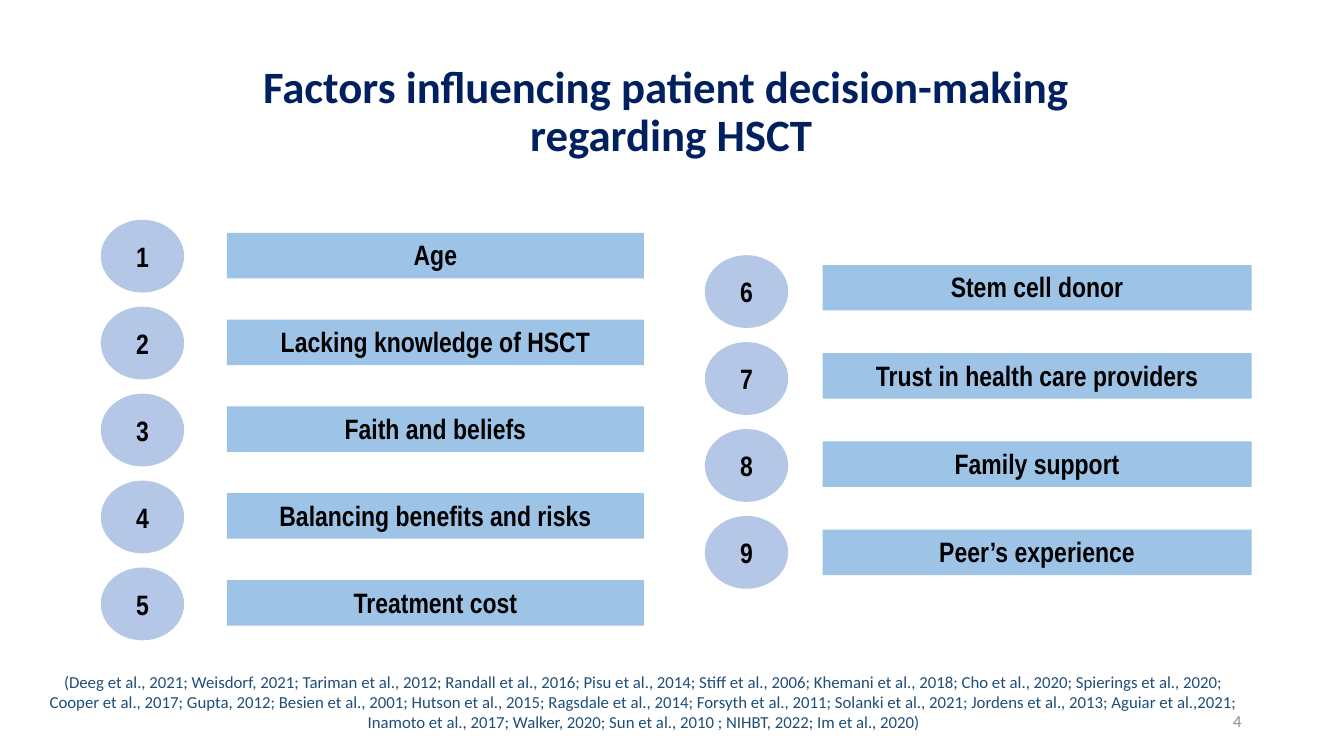
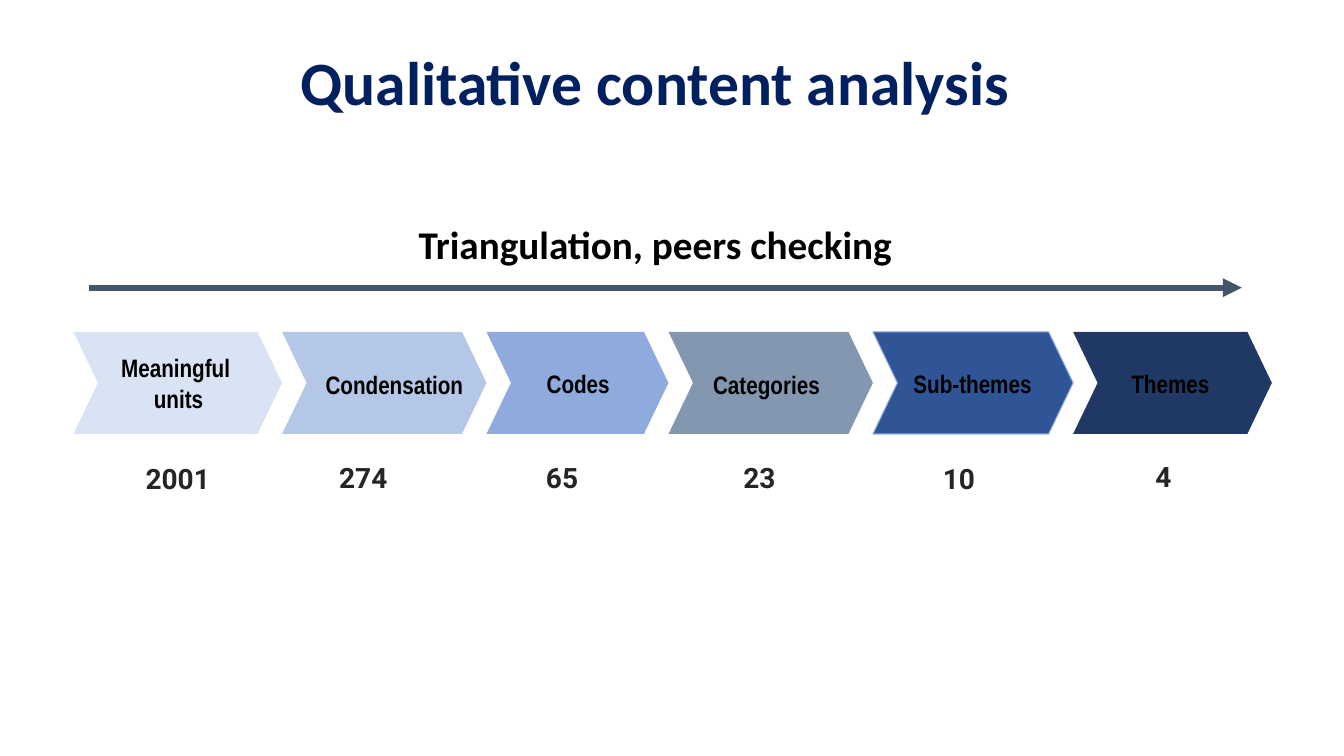
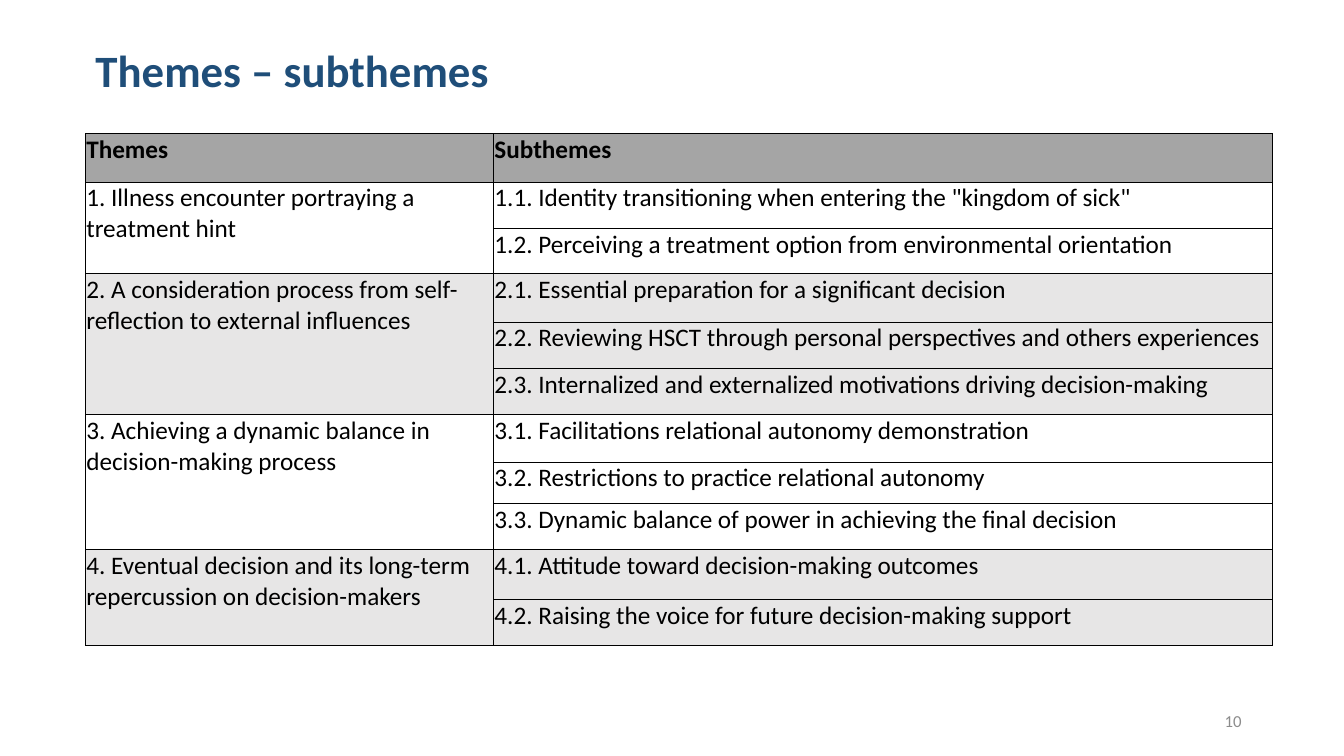
from collections import namedtuple

from lxml.etree import SubElement
from pptx import Presentation
from pptx.dml.color import RGBColor
from pptx.enum.shapes import MSO_CONNECTOR, MSO_SHAPE
from pptx.enum.text import MSO_ANCHOR, MSO_AUTO_SIZE, PP_ALIGN
from pptx.oxml.ns import qn
from pptx.util import Pt

Box = namedtuple("Box", "left top width height")
Style = namedtuple("Style", "font size color bold", defaults=(False,))
Stage = namedtuple(
    "Stage", "label fill width label_left label_top label_width count count_left count_top")

BLACK, WHITE, NAVY, BLUE = "000000", "FFFFFF", "002060", "1F4E79"
CIRCLE_FILL, BAR_FILL, ARROW_COLOR = "B4C7E7", "9DC3E6", "44546A"
HEADER_FILL, BAND_FILL = "A5A5A5", "E7E6E6"
WIDE_INSETS = (9.6, 9.6, 9.6, 9.6)
BAR_INSETS = (9.6, 3.6, 9.6, 9.6)
PLAIN_INSETS = (7.2, 3.6, 7.2, 3.6)
CELL_INSETS = (0.7, 0.7, 0.7, 0)

FACTOR = Style("Arial Narrow", 20, BLACK, True)
STAGE_LABEL = Style("Arial Narrow", 18, BLACK, True)
STAGE_COUNT = Style("Roboto", 20, "252525", True)
BANNER = Style("Calibri", 28, BLACK, True)
REFERENCE = Style("Calibri", 12, BLUE)
PAGE_NUMBER = Style("Calibri", 12, "8C8C8C")
TABLE_HEAD = Style("Calibri", 18, BLACK, True)
TABLE_BODY = Style("Calibri", 18, BLACK)

LEFT_FACTORS = ["Age", "Lacking knowledge of HSCT", "Faith and beliefs",
                "Balancing benefits and risks", "Treatment cost"]
RIGHT_FACTORS = ["Stem cell donor", "Trust in health care providers",
                 "Family support", "Peer’s experience"]
REFERENCES = (
    "(Deeg et al., 2021; Weisdorf, 2021; Tariman et al., 2012; Randall et al., 2016; "
    "Pisu et al., 2014; Stiff et al., 2006; Khemani et al., 2018; Cho et al., 2020; "
    "Spierings et al., 2020; Cooper et al., 2017; Gupta, 2012; Besien et al., 2001; "
    "Hutson et al., 2015; Ragsdale et al., 2014; Forsyth et al., 2011; "
    "Solanki et al., 2021; Jordens et al., 2013; Aguiar et al.,2021; "
    "Inamoto et al., 2017; Walker, 2020; Sun et al., 2010 ; NIHBT, 2022; Im et al., 2020)")
STAGES = [
    Stage("Meaningful \nunits", "DAE3F3", 149, 2, 19, 146, "2001", -11.5, 83),
    Stage("Condensation", "B4C7E7", 146, -4, 20, 168.5, "274", -28, 82),
    Stage("Codes", "8FAADC", 130, -7.5, 19.5, 146, "65", -32, 82),
    Stage("Categories", "8497B0", 146, -3, 20, 146, "23", -21, 82),
    Stage("Sub-themes", "2F5597", 143, -13, 19, 168.5, "10", -24.5, 83),
    Stage("Themes", "203864", 142, -3.5, 19, 146, "4", -21.5, 81.5),
]
THEMES = [
    ("1. Illness encounter portraying a treatment hint",
     ['1.1. Identity transitioning when entering the "kingdom of sick"',
      "1.2. Perceiving a treatment option from environmental orientation"]),
    ("2. A consideration process from self-reflection to external influences",
     ["2.1. Essential preparation for a significant decision",
      "2.2. Reviewing HSCT through personal perspectives and others experiences",
      "2.3. Internalized and externalized motivations driving decision-making"]),
    ("3. Achieving a dynamic balance in decision-making process",
     ["3.1. Facilitations relational autonomy demonstration",
      "3.2. Restrictions to practice relational autonomy",
      "3.3. Dynamic balance of power in achieving the final decision"]),
    ("4. Eventual decision and its long-term repercussion on decision-makers",
     ["4.1. Attitude toward decision-making outcomes",
      "4.2. Raising the voice for future decision-making support"]),
]
COLUMN_WIDTHS = [291.5, 556]
ROW_HEIGHTS = [34.5, 33, 32.5, 34.5, 33, 33, 34, 29.5, 33, 35.5, 33]


def rgb(value):
    """Turn a hex string into a colour."""
    return RGBColor.from_string(value)


def points(box):
    """Return the four lengths of a box in points."""
    return [Pt(length) for length in box]


def set_insets(target, insets):
    """Set the four margins of a text frame or cell."""
    (target.margin_left, target.margin_top,
     target.margin_right, target.margin_bottom) = points(insets)


def write(frame, text, style, align=PP_ALIGN.CENTER, spacing=None):
    """Fill a text frame and format its paragraphs."""
    frame.text = text
    for paragraph in frame.paragraphs:
        paragraph.alignment = align
        if spacing:
            paragraph.line_spacing = spacing
        font = paragraph.font
        font.name, font.size, font.bold = style.font, Pt(style.size), style.bold
        font.color.rgb = rgb(style.color)


def set_frame(frame, insets, anchor):
    """Give a text frame fixed size, wrapping, margins and anchor."""
    frame.auto_size = MSO_AUTO_SIZE.NONE
    frame.word_wrap = True
    frame.vertical_anchor = anchor
    set_insets(frame, insets)


def add_text(page, box, text, style, insets=PLAIN_INSETS,
             anchor=MSO_ANCHOR.TOP, align=PP_ALIGN.CENTER):
    """Add a text box."""
    frame = page.shapes.add_textbox(*points(box)).text_frame
    set_frame(frame, insets, anchor)
    write(frame, text, style, align)


def add_filled(page, kind, box, fill):
    """Add a flat preset shape without outline."""
    shape = page.shapes.add_shape(kind, *points(box))
    shape.shadow.inherit = False
    shape.fill.solid()
    shape.fill.fore_color.rgb = rgb(fill)
    shape.line.fill.background()
    return shape


def add_labelled(page, kind, box, fill, text, style, insets, anchor=MSO_ANCHOR.TOP):
    """Add a flat preset shape that holds text."""
    frame = add_filled(page, kind, box, fill).text_frame
    set_frame(frame, insets, anchor)
    write(frame, text, style)


def add_page(deck, box, title, size, color=NAVY, align=PP_ALIGN.CENTER, insets=WIDE_INSETS):
    """Add a title-only slide with its title in the given box."""
    page = deck.slides.add_slide(deck.slide_layouts[5])
    shape = page.shapes.title
    shape.left, shape.top, shape.width, shape.height = points(box)
    set_frame(shape.text_frame, insets, MSO_ANCHOR.MIDDLE)
    write(shape.text_frame, title, Style("Calibri", size, color, True), align, 0.9)
    return page


def add_page_number(page, number):
    """Add the page number at the bottom right."""
    add_text(page, Box(678, 500.5, 216, 28.75), number, PAGE_NUMBER,
             anchor=MSO_ANCHOR.MIDDLE, align=PP_ALIGN.RIGHT)


def add_factor_column(page, box, factors, first, bar_left, bar_top, bar_pitch):
    """Stack numbered circles with bars beside them."""
    for index, factor in enumerate(factors):
        circle = Box(box.left, box.top + index * 62.1, 59.5, 52)
        add_labelled(page, MSO_SHAPE.OVAL, circle, CIRCLE_FILL, str(first + index),
                     FACTOR, WIDE_INSETS, MSO_ANCHOR.MIDDLE)
        bar = Box(box.left + bar_left, box.top + bar_top + index * bar_pitch,
                  box.width - bar_left, 32.5)
        add_labelled(page, MSO_SHAPE.RECTANGLE, bar, BAR_FILL, factor, FACTOR, BAR_INSETS)


def add_arrow(page, box):
    """Draw a horizontal arrow along the top of the box."""
    arrow = page.shapes.add_connector(
        MSO_CONNECTOR.STRAIGHT, Pt(box.left), Pt(box.top),
        Pt(box.left + box.width), Pt(box.top))
    arrow.line.color.rgb = rgb(ARROW_COLOR)
    arrow.line.width = Pt(4.5)
    properties = arrow.element.spPr
    SubElement(properties.find(qn("a:ln")), qn("a:tailEnd"), type="triangle")
    SubElement(properties, qn("a:effectLst"))


def add_stages(page, box, stages):
    """Place chevrons end to end with labels on and counts below them."""
    left = box.left
    for stage in stages:
        chevron = add_filled(page, MSO_SHAPE.CHEVRON,
                             Box(left, box.top, stage.width, box.height), stage.fill)
        chevron.adjustments[0] = 0.24
        if stage.label == "Sub-themes":
            chevron.line.color.rgb = rgb("8FAADC")
            chevron.line.width = Pt(0.75)
        add_text(page, Box(left + stage.label_left, box.top + stage.label_top,
                           stage.label_width, 35),
                 stage.label, STAGE_LABEL, WIDE_INSETS, MSO_ANCHOR.MIDDLE)
        add_text(page, Box(left + stage.count_left, box.top + stage.count_top, 172, 65.5),
                 stage.count, STAGE_COUNT, WIDE_INSETS)
        left += stage.width


def format_cell(cell, fill):
    """Give a cell thin black borders, small margins and its fill."""
    set_insets(cell, CELL_INSETS)
    properties = cell._tc.get_or_add_tcPr()
    for side in ("a:lnL", "a:lnR", "a:lnT", "a:lnB"):
        line = SubElement(properties, qn(side), w=str(Pt(0.5)))
        SubElement(SubElement(line, qn("a:solidFill")), qn("a:srgbClr"), val=BLACK)
    if fill:
        cell.fill.solid()
        cell.fill.fore_color.rgb = rgb(fill)
    else:
        cell.fill.background()


def add_theme_table(page, box, themes):
    """Build the table of themes, each spanning its subthemes."""
    table = page.shapes.add_table(len(ROW_HEIGHTS), 2, *points(box)).table
    table.first_row = table.horz_banding = False
    for column, width in zip(table.columns, COLUMN_WIDTHS):
        column.width = Pt(width)
    for row, height in zip(table.rows, ROW_HEIGHTS):
        row.height = Pt(height)
    for index, heading in enumerate(["Themes", "Subthemes"]):
        cell = table.cell(0, index)
        format_cell(cell, HEADER_FILL)
        write(cell.text_frame, heading, TABLE_HEAD, PP_ALIGN.LEFT)
    top = 1
    for index, (theme, subthemes) in enumerate(themes):
        fill = BAND_FILL if index % 2 else None
        for row, subtheme in enumerate(subthemes, top):
            format_cell(table.cell(row, 0), fill)
            format_cell(table.cell(row, 1), fill)
            write(table.cell(row, 1).text_frame, subtheme, TABLE_BODY, PP_ALIGN.LEFT)
        table.cell(top, 0).merge(table.cell(top + len(subthemes) - 1, 0))
        write(table.cell(top, 0).text_frame, theme, TABLE_BODY, PP_ALIGN.LEFT)
        top += len(subthemes)


def build_factors(deck):
    """Build the slide of decision factors."""
    page = add_page(deck, Box(72.5, 36.5, 814, 88.5),
                    "Factors influencing patient decision-making \vregarding HSCT", 32)
    add_factor_column(page, Box(72, 157, 388, 300), LEFT_FACTORS, 1, 90, 9.3, 62)
    add_factor_column(page, Box(503.5, 182.3, 390.5, 238), RIGHT_FACTORS, 6, 84, 7, 63)
    add_text(page, Box(25, 476, 870, 51), REFERENCES, REFERENCE)
    add_page_number(page, "4")


def build_analysis(deck):
    """Build the slide of analysis stages."""
    page = add_page(deck, Box(41, 35, 854, 52), "Qualitative content analysis", 44)
    add_stages(page, Box(52.5, 237, 856, 73), STAGES)
    add_arrow(page, Box(63.5, 205.5, 823.5, 0))
    add_labelled(page, MSO_SHAPE.RECTANGLE, Box(268.5, 154, 399, 41), WHITE,
                 "Triangulation, peers checking", BANNER, PLAIN_INSETS)


def build_themes(deck):
    """Build the slide of themes and subthemes."""
    page = add_page(deck, Box(61, 29.5, 864, 45.5), "Themes – subthemes", 32,
                    BLUE, PP_ALIGN.LEFT, PLAIN_INSETS)
    add_theme_table(page, Box(61, 95.5, 847.5, 365.5), THEMES)
    add_page_number(page, "10")


def main():
    """Build and save the deck."""
    deck = Presentation()
    deck.slide_width, deck.slide_height = Pt(960), Pt(540)
    build_factors(deck)
    build_analysis(deck)
    build_themes(deck)
    deck.save("out.pptx")


if __name__ == "__main__":
    main()
